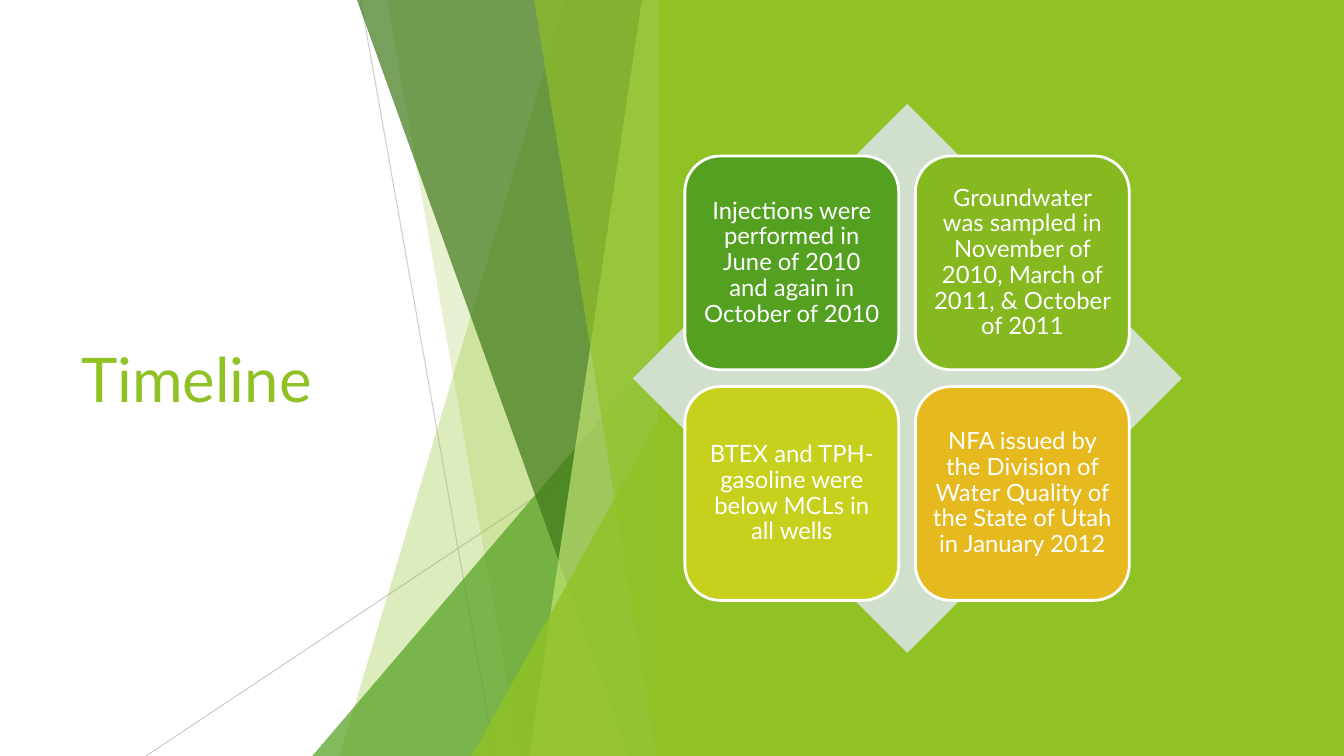
from lxml import etree
from pptx import Presentation
from pptx.dml.color import RGBColor
from pptx.enum.shapes import MSO_CONNECTOR, MSO_SHAPE
from pptx.enum.text import MSO_ANCHOR, PP_ALIGN
from pptx.oxml.ns import qn
from pptx.util import Cm, Pt

LINE = MSO_CONNECTOR.STRAIGHT
RECT, DIAMOND = MSO_SHAPE.RECTANGLE, MSO_SHAPE.DIAMOND
CARD, TRIANGLE = MSO_SHAPE.ROUNDED_RECTANGLE, MSO_SHAPE.ISOSCELES_TRIANGLE
LEFT, CENTER = PP_ALIGN.LEFT, PP_ALIGN.CENTER
MIDDLE = MSO_ANCHOR.MIDDLE

THEME = {
    "font": "Lato", "title_size": 44, "card_size": 17,
    "white": "FFFFFF", "lime": "90C226", "green": "54A021",
    "forest": "3F7819", "pale": "C0E474", "hairline": "BFBFBF",
    "diamond": "D1DFCD", "leaf": "86B820", "citron": "C7D01D", "amber": "E6B91E",
}


def paint(sp, color, opacity=100):
    """Flat fill without outline or shadow; opacity is in percent."""
    sp.shadow.inherit = False
    sp.fill.solid()
    sp.fill.fore_color.rgb = RGBColor.from_string(THEME[color])
    sp.line.fill.background()
    if opacity < 100:
        clr = sp.fill._xPr.find(".//" + qn("a:srgbClr"))
        etree.SubElement(clr, qn("a:alpha"), val=str(opacity * 1000))


def write(sp, text, *, size, color, align=LEFT, spacing=1.0, inset=0.25):
    tf = sp.text_frame
    tf.word_wrap = True
    tf.vertical_anchor = MIDDLE
    tf.margin_left = tf.margin_right = tf.margin_top = tf.margin_bottom = Cm(inset)
    p = tf.paragraphs[0]
    p.alignment, p.line_spacing = align, spacing
    r = p.add_run()
    r.text = text
    r.font.name, r.font.size = THEME["font"], Pt(THEME[size])
    r.font.color.rgb = RGBColor.from_string(THEME[color])


prs = Presentation()
prs.slide_width, prs.slide_height = Cm(33.87), Cm(19.05)
s = prs.slides.add_slide(prs.slide_layouts[6])

# Title
title = s.shapes.add_textbox(Cm(1.8), Cm(3.84), Cm(9.86), Cm(11.38))
write(title, "Timeline", size="title_size", color="lime")

# Hairlines behind the shards
HEIGHT = 19.05
for x1, y1, x2, opacity in [(9.09, 0, 12.47, 75), (16.92, 10.24, 3.68, 80)]:
    line = s.shapes.add_connector(LINE, Cm(x1), Cm(y1), Cm(x2), Cm(HEIGHT))
    line.line.width = Pt(0.75)
    line.line.color.rgb = RGBColor.from_string(THEME["hairline"])
    spPr = line._element.spPr
    etree.SubElement(spPr.find(".//" + qn("a:srgbClr")), qn("a:alpha"),
                     val=str(opacity * 1000))
    etree.SubElement(spPr, qn("a:effectLst"))

# Shards share one right edge: full-height ones slant from top x to bottom x,
# triangles rise from a bottom-left corner to a peak on that edge
EDGE = 16.92
SHARDS = [
    ("slant", 14.25, 8.56, "lime", 30),
    ("slant", 9.75, 13.11, "lime", 20),
    ("peak", 7.87, 8.46, "green", 72),
    ("slant", 8.99, 15.85, "forest", 70),
    ("slant", 16.18, 13.34, "pale", 70),
    ("slant", 13.46, 16.54, "lime", 65),
    ("peak", 11.89, 9.98, "lime", 80),
]
for kind, a, b, color, opacity in SHARDS:
    if kind == "peak":
        shard = s.shapes.add_shape(TRIANGLE, Cm(a), Cm(b), Cm(EDGE - a), Cm(HEIGHT - b))
        shard.adjustments[0] = 1
    else:
        outline = s.shapes.build_freeform(Cm(a), Cm(-0.02))
        outline.add_line_segments([(Cm(EDGE), Cm(-0.02)), (Cm(EDGE), Cm(HEIGHT)),
                                   (Cm(b), Cm(HEIGHT))], close=True)
        shard = outline.convert_to_shape()
    paint(shard, color, opacity)

# Right panel and diamond
panel = s.shapes.add_shape(RECT, Cm(16.6), 0, Cm(17.27), Cm(HEIGHT))
paint(panel, "lime")
diamond = s.shapes.add_shape(DIAMOND, Cm(15.95), Cm(2.62), Cm(13.83), Cm(13.83))
paint(diamond, "diamond")

# Two-by-two timeline cards
CARD_LEFT, CARD_TOP, CARD_SIZE, PITCH = 17.26, 3.93, 5.39, 5.81
CARDS = [
    ("green", "Injections were performed in June of 2010 and again in October of 2010"),
    ("leaf", "Groundwater was sampled in November of 2010, March of 2011, & October of 2011"),
    ("citron", "BTEX and TPH-gasoline were below MCLs in all wells"),
    ("amber", "NFA issued by the Division of Water Quality of the State of Utah in January 2012"),
]
for i, (color, text) in enumerate(CARDS):
    row, col = divmod(i, 2)
    card = s.shapes.add_shape(CARD, Cm(CARD_LEFT + col * PITCH), Cm(CARD_TOP + row * PITCH),
                              Cm(CARD_SIZE), Cm(CARD_SIZE))
    paint(card, color)
    card.line.color.rgb = RGBColor.from_string(THEME["white"])
    card.line.width = Pt(2)
    write(card, text, size="card_size", color="white", align=CENTER, spacing=0.9, inset=0.18)

prs.save("out.pptx")
